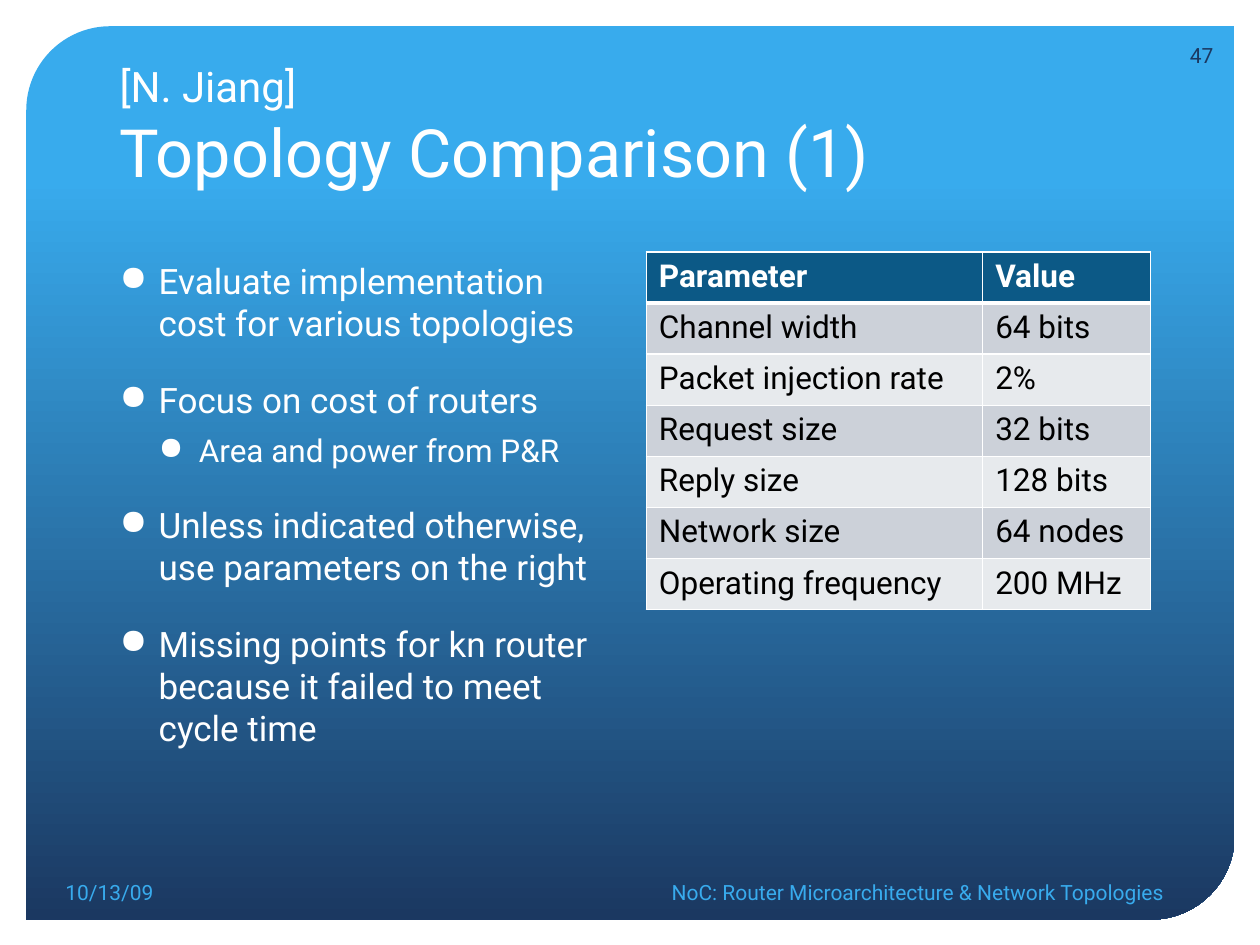
from dataclasses import dataclass, field

from lxml.etree import SubElement
from pptx import Presentation
from pptx.dml.color import RGBColor as Rgb
from pptx.enum.shapes import MSO_SHAPE as Preset
from pptx.enum.text import MSO_ANCHOR as Anchor, PP_ALIGN as Align
from pptx.oxml import parse_xml
from pptx.oxml.ns import nsdecls, qn
from pptx.util import Cm, Pt


@dataclass(frozen=True)
class Theme:
    font: str = "Roboto"
    white: str = "FFFFFF"
    black: str = "000000"
    sky: str = "38ABED"
    navy: str = "1B3861"
    header: str = "0C5986"
    bands: tuple = ("CCD1D9", "E7EAED")
    title: int = 38
    source: int = 24
    body: int = 20
    detail: int = 18
    footer: int = 12


THEME = Theme()


@dataclass(frozen=True)
class Span:
    text: str
    size: int
    color: str = THEME.white
    bold: bool = False


@dataclass(frozen=True)
class Bullet:
    text: str
    level: int = 0


@dataclass(frozen=True)
class Label:
    spans: tuple
    left: float
    top: float
    width: float
    height: float
    frame: dict = field(default_factory=lambda: {"vertical_anchor": Anchor.MIDDLE})
    align: Align = Align.LEFT


@dataclass(frozen=True)
class Level:
    size: int
    margin: float
    hanging: float
    before: int


LEVELS = (
    Level(THEME.body, 0.79, 0.79, 20),
    Level(THEME.detail, 1.6, 0.81, 6),
)
BULLETS = (
    Bullet("Evaluate implementation cost for various topologies"),
    Bullet("Focus on cost of routers"),
    Bullet("Area and power from P&R", 1),
    Bullet("Unless indicated otherwise, use parameters on the right"),
    Bullet("Missing points for kn router because it failed to meet cycle time"),
)
LABELS = (
    Label(
        (Span("[N. Jiang]", THEME.source), Span("Topology Comparison (1)", THEME.title)),
        2.16, 1.07, 21.06, 2.9, {"vertical_anchor": Anchor.BOTTOM},
    ),
    Label((Span("10/13/09", THEME.footer, THEME.sky),), 1.07, 17.48, 5.23, 1.02),
    Label((Span("47", THEME.footer, THEME.navy),), 23.34, 0.61, 1.37, 1.02, align=Align.RIGHT),
    Label(
        (Span("NoC: Router Microarchitecture & Network Topologies", THEME.footer, THEME.sky),),
        9.17, 17.48, 14.55, 1.02, align=Align.RIGHT,
    ),
)
PARAMETERS = (
    ("Parameter", "Value"),
    ("Channel width", "64 bits"),
    ("Packet injection rate", "2%"),
    ("Request size", "32 bits"),
    ("Reply size", "128 bits"),
    ("Network size", "64 nodes"),
    ("Operating frequency", "200 MHz"),
)
COLUMN_WIDTHS = (6.78, 3.38)
ROW_HEIGHT = 1.03


def apply(target, values: dict) -> None:
    """Set each named format value on the target."""
    for name, value in values.items():
        setattr(target, name, value)


def add_span(para, span: Span) -> None:
    """Append one formatted run to a paragraph."""
    run = para.add_run()
    run.text = span.text
    apply(run.font, {"name": THEME.font, "size": Pt(span.size), "bold": span.bold})
    run.font.color.rgb = Rgb.from_string(span.color)


def add_frame(page, left: float, top: float, width: float, height: float, values: dict):
    """Add a wrapping text box and return its text frame."""
    frame = page.shapes.add_textbox(Cm(left), Cm(top), Cm(width), Cm(height)).text_frame
    apply(frame, {"word_wrap": True, **values})
    return frame


def add_panel(page) -> None:
    """Draw the gradient panel with two rounded corners."""
    panel = page.shapes.add_shape(
        Preset.ROUND_2_DIAG_RECTANGLE, Cm(0.53), Cm(0.53), Cm(24.36), Cm(18.01)
    )
    panel.shadow.inherit = False
    panel.adjustments[0], panel.adjustments[1] = 0.094, 0
    panel.line.fill.background()
    panel.fill.gradient()
    panel.fill.gradient_angle = 270
    colors = ((0.17, THEME.sky), (1, THEME.navy))
    for stop, (position, color) in zip(panel.fill.gradient_stops, colors):
        stop.position = position
        stop.color.rgb = Rgb.from_string(color)


def add_label(page, label: Label) -> None:
    """Draw a one-paragraph text box with one span to a line."""
    frame = add_frame(page, label.left, label.top, label.width, label.height, label.frame)
    para = frame.paragraphs[0]
    para.alignment = label.align
    for index, span in enumerate(label.spans):
        if index:
            para.add_line_break()
        add_span(para, span)


def add_bullets(page, bullets: tuple[Bullet, ...]) -> None:
    """Draw the bulleted body text."""
    frame = add_frame(page, 2.16, 5.1, 10.16, 11.7, {"vertical_anchor": Anchor.TOP})
    for index, bullet in enumerate(bullets):
        level = LEVELS[bullet.level]
        para = frame.add_paragraph() if index else frame.paragraphs[0]
        before = level.before if index else 0
        apply(para, {"level": bullet.level, "space_before": Pt(before)})
        properties = para._p.get_or_add_pPr()
        properties.set("marL", str(Cm(level.margin)))
        properties.set("indent", str(-Cm(level.hanging)))
        SubElement(properties, qn("a:buChar")).set("char", "●")
        add_span(para, Span(bullet.text, level.size))


def add_borders(cell, bottom: float) -> None:
    """Give a cell white borders with the stated bottom width."""
    properties = cell._tc.get_or_add_tcPr()
    widths = {"lnL": 1, "lnR": 1, "lnT": 1, "lnB": bottom}
    for index, (side, width) in enumerate(widths.items()):
        border = parse_xml(
            f'<a:{side} {nsdecls("a")} w="{Pt(width)}"><a:solidFill>'
            f'<a:srgbClr val="{THEME.white}"/></a:solidFill></a:{side}>'
        )
        properties.insert(index, border)


def add_parameters(page, rows: tuple) -> None:
    """Draw the parameter table with a header and banded rows."""
    table = page.shapes.add_table(
        len(rows), len(COLUMN_WIDTHS), Cm(13.03), Cm(5.08),
        Cm(sum(COLUMN_WIDTHS)), Cm(ROW_HEIGHT * len(rows)),
    ).table
    table.horz_banding = False
    for column, width in zip(table.columns, COLUMN_WIDTHS):
        column.width = Cm(width)
    for row_index, values in enumerate(rows):
        table.rows[row_index].height = Cm(ROW_HEIGHT)
        heading = row_index == 0
        fill = THEME.header if heading else THEME.bands[(row_index - 1) % 2]
        color = THEME.white if heading else THEME.black
        for column_index, text in enumerate(values):
            cell = table.cell(row_index, column_index)
            cell.fill.solid()
            cell.fill.fore_color.rgb = Rgb.from_string(fill)
            add_borders(cell, 3 if heading else 1)
            add_span(cell.text_frame.paragraphs[0], Span(text, THEME.detail, color, heading))


def main() -> None:
    """Build and save the slide."""
    deck = Presentation()
    apply(deck, {"slide_width": Cm(25.4), "slide_height": Cm(19.05)})
    page = deck.slides.add_slide(deck.slide_layouts[6])
    add_panel(page)
    add_parameters(page, PARAMETERS)
    add_bullets(page, BULLETS)
    for label in LABELS:
        add_label(page, label)
    deck.save("out.pptx")


if __name__ == "__main__":
    main()
